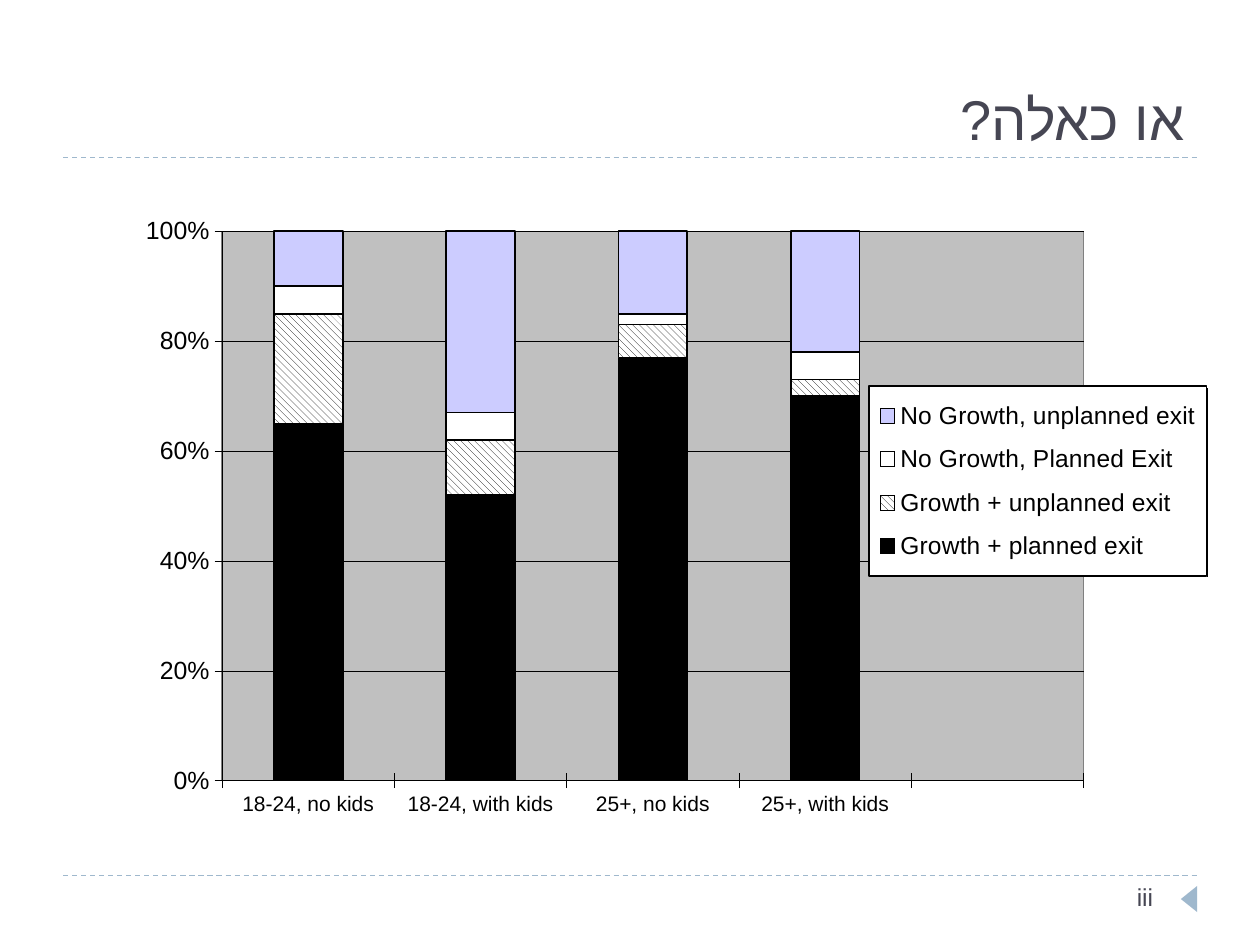
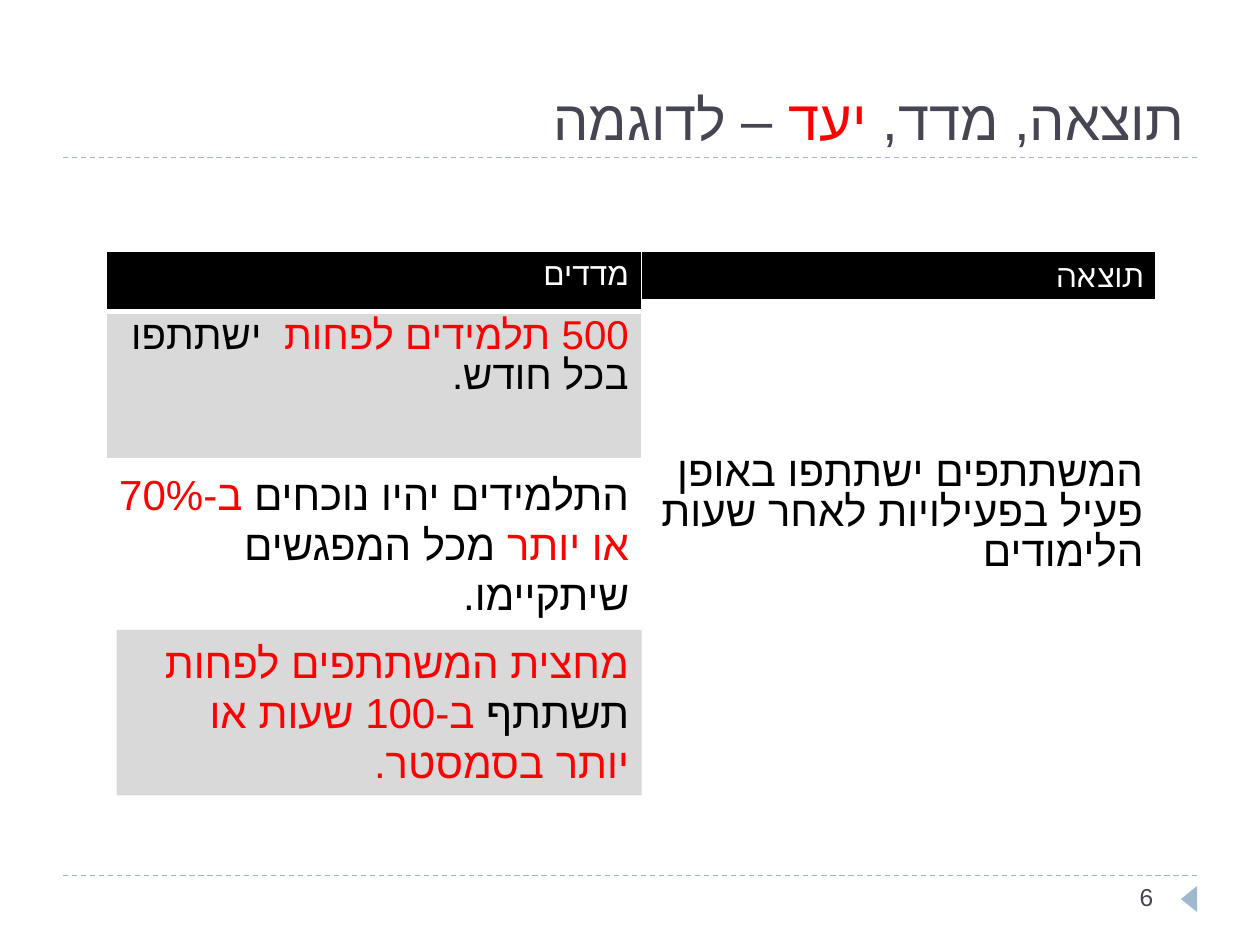
from dataclasses import dataclass

from lxml.etree import SubElement
from pptx import Presentation
from pptx.chart.data import CategoryChartData
from pptx.dml.color import RGBColor
from pptx.enum.chart import XL_CHART_TYPE as ChartType
from pptx.enum.chart import XL_LEGEND_POSITION as LegendPosition
from pptx.enum.chart import XL_TICK_LABEL_POSITION as LabelPosition
from pptx.enum.chart import XL_TICK_MARK as TickMark
from pptx.enum.dml import MSO_LINE_DASH_STYLE as Dash
from pptx.enum.dml import MSO_PATTERN_TYPE as Pattern
from pptx.enum.shapes import MSO_CONNECTOR_TYPE as Connector
from pptx.enum.shapes import MSO_SHAPE as Preset
from pptx.enum.text import MSO_ANCHOR as Anchor
from pptx.enum.text import PP_ALIGN as Align
from pptx.oxml import parse_xml
from pptx.oxml.ns import nsdecls, qn
from pptx.util import Inches, Pt

BLACK = RGBColor(0x00, 0x00, 0x00)
WHITE = RGBColor(0xFF, 0xFF, 0xFF)
RED = RGBColor(0xFF, 0x00, 0x00)
INK = RGBColor(0x46, 0x46, 0x53)
MIST = RGBColor(0x9F, 0xB8, 0xCD)
BAND = RGBColor(0xD9, 0xD9, 0xD9)
LILAC = RGBColor(0xCC, 0xCC, 0xFF)
PLOT_GRAY = RGBColor(0xC0, 0xC0, 0xC0)
PLOT_EDGE = RGBColor(0x80, 0x80, 0x80)

COLUMNS, ROWS = 120, 90
UNIT = Inches(10) // COLUMNS
BODY_FONT = "Arial"
HEADER_FONT = "Cabin"


def grid(units: float) -> int:
    return round(units * UNIT)


@dataclass(frozen=True)
class Box:
    col: float
    row: float
    cols: float
    rows: float

    def emu(self) -> tuple[int, ...]:
        return tuple(map(grid, (self.col, self.row, self.cols, self.rows)))


@dataclass(frozen=True)
class Words:
    text: str
    color: RGBColor = BLACK


@dataclass(frozen=True)
class Style:
    size: float
    font: str = BODY_FONT
    spacing: float | None = None


@dataclass(frozen=True)
class Cell:
    rows: float
    words: tuple[Words, ...]
    style: Style
    fill: RGBColor | None = None
    top_margin: float = 0.6
    bottom_border: float = 1


@dataclass(frozen=True)
class Series:
    name: str
    values: tuple[int | None, ...]
    color: RGBColor | None


TITLE_BOX = Box(8, 4, 106, 11)
NUMBER_BOX = Box(85, 83.4, 26, 4.8)
MARKER_BOX = Box(112, 84.84, 2.5, 1.56)
RULE_ROWS = (15, 83.4)
CHART_BOX = Box(0, 16, 115, 67)

TITLE = Style(32)
NUMBER = Style(14)
STATEMENT = Style(24)

AGE_GROUPS = ("18-24, no kids", "18-24, with kids", "25+, no kids", "25+, with kids", "")
EXITS = (
    Series("Growth + planned exit", (65, 52, 77, 70, None), BLACK),
    Series("Growth + unplanned exit", (20, 10, 6, 3, None), None),
    Series("No Growth, Planned Exit", (5, 5, 2, 5, None), WHITE),
    Series("No Growth, unplanned exit", (10, 33, 15, 22, None), LILAC),
)

OUTCOME_CELLS = (
    Cell(4.8, (Words("תוצאה", WHITE),), Style(18, HEADER_FONT), BLACK, bottom_border=3),
    Cell(30.5, (Words("המשתתפים ישתתפו באופן פעיל בפעילויות לאחר שעות הלימודים"),),
         Style(24, spacing=0.85), top_margin=14.6),
    Cell(22.9, (), Style(18), WHITE),
)
MEASURE_CELLS = (
    Cell(5.75, (Words("מדדים", WHITE),), Style(18), BLACK, bottom_border=3),
    Cell(14, (Words("500 תלמידים לפחות ", RED), Words(" ישתתפו בכל חודש.")),
         Style(23, spacing=0.88), BAND),
)
ATTENDANCE = (
    Words("התלמידים יהיו נוכחים "),
    Words("ב-70% או יותר ", RED),
    Words("מכל המפגשים שיתקיימו."),
)
HOURS = (
    Words("מחצית המשתתפים לפחות", RED),
    Words(" תשתתף "),
    Words("ב-100 שעות או יותר בסמסטר.", RED),
)


def write(frame, words: tuple[Words, ...], style: Style) -> None:
    frame.word_wrap = True
    paragraph = frame.paragraphs[0]
    paragraph.alignment = Align.RIGHT
    if style.spacing:
        paragraph.line_spacing = style.spacing
    paragraph.font.size = Pt(style.size)
    paragraph.font.name = style.font
    properties = paragraph._p.get_or_add_pPr()
    properties.set("rtl", "1")
    SubElement(properties.find(qn("a:defRPr")), qn("a:cs"), typeface=style.font)
    colors = {part.color for part in words}
    if len(colors) == 1:
        paragraph.font.color.rgb = words[0].color
    for part in words:
        run = paragraph.add_run()
        run.text = part.text
        if len(colors) > 1:
            run.font.color.rgb = part.color


def add_text(slide, box: Box, words: tuple[Words, ...], style: Style,
             anchor: Anchor = Anchor.TOP) -> None:
    frame = slide.shapes.add_textbox(*box.emu()).text_frame
    frame.vertical_anchor = anchor
    write(frame, words, style)


def add_filled(slide, preset: Preset, box: Box, color: RGBColor):
    shape = slide.shapes.add_shape(preset, *box.emu())
    shape.shadow.inherit = False
    shape.fill.solid()
    shape.fill.fore_color.rgb = color
    shape.line.fill.background()
    return shape


def add_rule(slide, start: tuple[float, float], end: tuple[float, float],
             color: RGBColor, dash: Dash | None = None) -> None:
    rule = slide.shapes.add_connector(Connector.STRAIGHT, *map(grid, start + end))
    rule.line.color.rgb = color
    rule.line.width = Pt(0.75)
    if dash:
        rule.line.dash_style = dash
    SubElement(rule._element.spPr, qn("a:effectLst"))


def add_page(deck, title: tuple[Words, ...], number: str):
    slide = deck.slides.add_slide(deck.slide_layouts[6])
    for row in RULE_ROWS:
        add_rule(slide, (6, row), (COLUMNS - 6, row), MIST, Dash.DASH)
    add_filled(slide, Preset.ISOSCELES_TRIANGLE, MARKER_BOX, MIST).rotation = 270
    add_text(slide, TITLE_BOX, title, TITLE, Anchor.BOTTOM)
    add_text(slide, NUMBER_BOX, (Words(number, INK),), NUMBER)
    return slide


def set_borders(cell, bottom: float) -> None:
    properties = cell._tc.get_or_add_tcPr()
    for index, side in enumerate("LRTB"):
        width = Pt(bottom if side == "B" else 1)
        properties.insert(index, parse_xml(
            f'<a:ln{side} {nsdecls("a")} w="{width}"><a:solidFill>'
            f'<a:srgbClr val="{WHITE}"/></a:solidFill></a:ln{side}>'))


def add_column_table(slide, col: float, row: float, cols: float,
                     cells: tuple[Cell, ...]) -> None:
    box = Box(col, row, cols, sum(cell.rows for cell in cells))
    table = slide.shapes.add_table(len(cells), 1, *box.emu()).table
    table.first_row = table.horz_banding = False
    for index, content in enumerate(cells):
        table.rows[index].height = grid(content.rows)
        cell = table.cell(index, 0)
        cell.margin_top = grid(content.top_margin)
        if content.fill is None:
            cell.fill.background()
        else:
            cell.fill.solid()
            cell.fill.fore_color.rgb = content.fill
        set_borders(cell, content.bottom_border)
        if content.words:
            write(cell.text_frame, content.words, content.style)


def chart_layout(x: float, y: float, w: float, h: float, target: str = ""):
    sizes = "".join(f'<c:{key} val="{value}"/>'
                    for key, value in zip("xywh", (x, y, w, h)))
    return parse_xml(
        f'<c:layout {nsdecls("c")}><c:manualLayout>{target}<c:xMode val="edge"/>'
        f'<c:yMode val="edge"/>{sizes}</c:manualLayout></c:layout>')


def chart_area(fill: RGBColor, line: RGBColor):
    return parse_xml(
        f'<c:spPr {nsdecls("c", "a")}><a:solidFill><a:srgbClr val="{fill}"/></a:solidFill>'
        f'<a:ln w="{Pt(0.75)}"><a:solidFill><a:srgbClr val="{line}"/></a:solidFill>'
        f'</a:ln></c:spPr>')


def replace_layout(parent, layout, index: int) -> None:
    for old in parent.findall(qn("c:layout")):
        parent.remove(old)
    parent.insert(index, layout)


def set_font(font, size: float) -> None:
    font.size = Pt(size)
    font.name = BODY_FONT
    font.color.rgb = BLACK


def set_line(line, width: float) -> None:
    line.color.rgb = BLACK
    line.width = Pt(width)


def style_series(plot) -> None:
    for drawn, exit_kind in zip(plot.series, EXITS):
        fill = drawn.format.fill
        if exit_kind.color is None:
            fill.patterned()
            fill.pattern = Pattern.WIDE_DOWNWARD_DIAGONAL
            fill.fore_color.rgb = BLACK
            fill.back_color.rgb = WHITE
        else:
            fill.solid()
            fill.fore_color.rgb = exit_kind.color
        drawn.invert_if_negative = False
        set_line(drawn.format.line, 1)


def add_exit_chart(slide) -> None:
    data = CategoryChartData()
    data.categories = AGE_GROUPS
    for exit_kind in EXITS:
        data.add_series(exit_kind.name, exit_kind.values)
    chart = slide.shapes.add_chart(ChartType.COLUMN_STACKED_100, *CHART_BOX.emu(), data).chart
    set_font(chart.font, 14.2)
    chart.has_title = False
    plot = chart.plots[0]
    plot.vary_by_categories = False
    plot.gap_width, plot.overlap = 150, 100
    style_series(plot)

    for axis, size in ((chart.category_axis, 12), (chart.value_axis, 14.2)):
        axis.major_tick_mark = TickMark.CROSS
        set_font(axis.tick_labels.font, size)
        set_line(axis.format.line, 0.25)
    chart.category_axis.tick_label_position = LabelPosition.LOW
    shares = chart.value_axis
    shares.major_unit = 0.2
    shares.tick_labels.number_format = "0%"
    shares.tick_labels.number_format_is_linked = False
    set_line(shares.major_gridlines.format.line, 0.25)

    chart.has_legend = True
    legend = chart.legend
    legend.position = LegendPosition.RIGHT
    legend.include_in_layout = False
    set_font(legend.font, 14)
    replace_layout(legend._element, chart_layout(0.72, 0.31, 0.28, 0.27), 1)
    legend._element.find(qn("c:txPr")).addprevious(chart_area(WHITE, BLACK))

    plot_area = chart._chartSpace.chart.plotArea
    inner = '<c:layoutTarget val="inner"/>'
    replace_layout(plot_area, chart_layout(0.184, 0.09, 0.714, 0.781, inner), 0)
    plot_area.append(chart_area(PLOT_GRAY, PLOT_EDGE))


def build_chart_slide(deck) -> None:
    slide = add_page(deck, (Words("או כאלה?", INK),), "iii")
    add_exit_chart(slide)
    add_rule(slide, (115, 37), (115, 55), BLACK)


def build_example_slide(deck) -> None:
    title = (Words("תוצאה, מדד, ", INK), Words("יעד", RED), Words(" – לדוגמה", INK))
    slide = add_page(deck, title, "6")
    add_column_table(slide, 61.1, 23.9, 49, OUTCOME_CELLS)
    add_column_table(slide, 10.1, 23.9, 51, MEASURE_CELLS)
    add_text(slide, Box(10.1, 44, 51, 15.75), ATTENDANCE, STATEMENT)
    hours_band = add_filled(slide, Preset.RECTANGLE, Box(11.1, 60, 50, 15.75), BAND)
    hours_band.text_frame.vertical_anchor = Anchor.TOP
    write(hours_band.text_frame, HOURS, STATEMENT)


def main() -> None:
    deck = Presentation()
    deck.slide_width, deck.slide_height = grid(COLUMNS), grid(ROWS)
    build_chart_slide(deck)
    build_example_slide(deck)
    deck.save("out.pptx")


if __name__ == "__main__":
    main()
